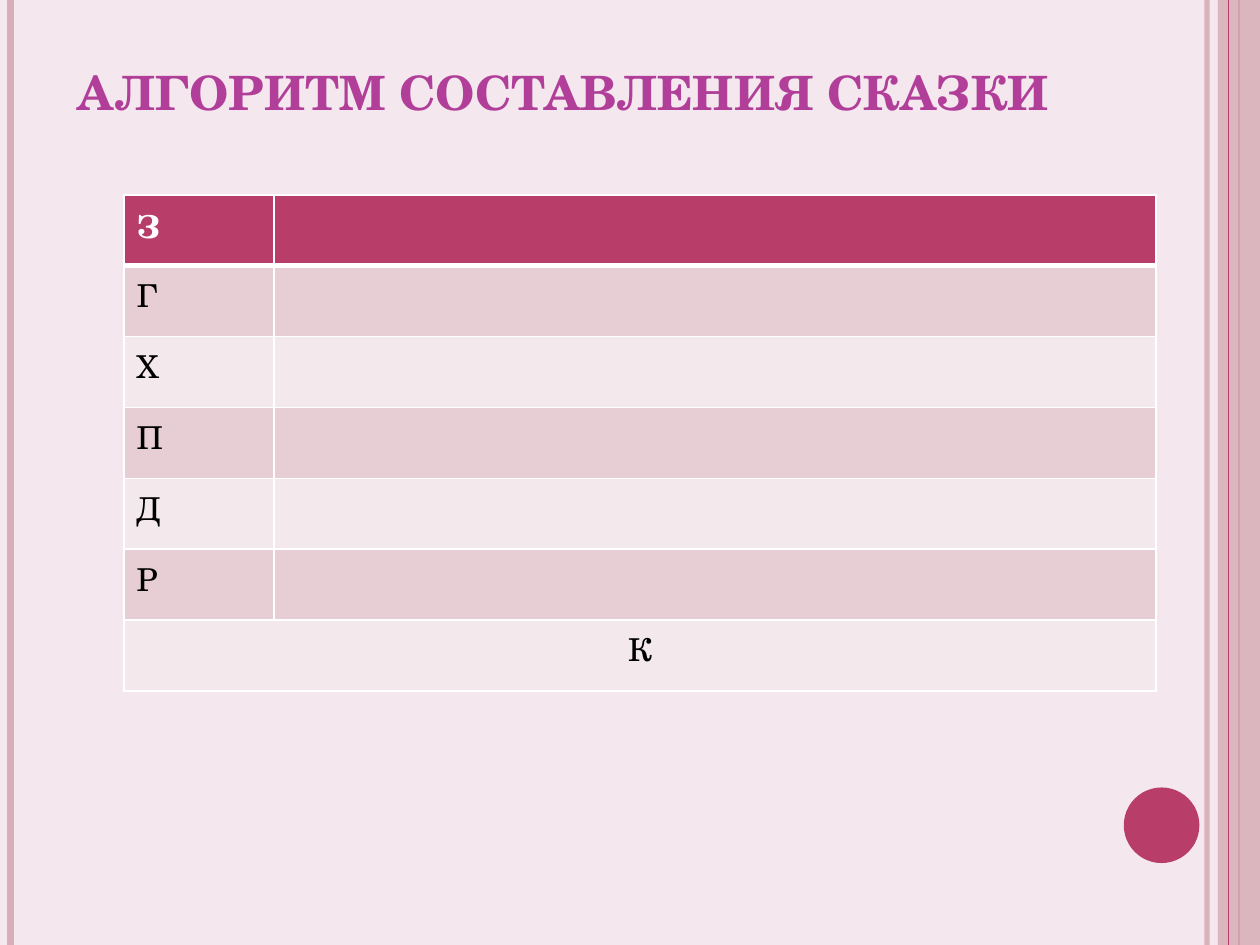
"""Build a slide with a table of steps for composing a fairy tale."""
from lxml import etree
from pptx import Presentation
from pptx.dml.color import RGBColor
from pptx.enum.shapes import MSO_CONNECTOR, MSO_SHAPE
from pptx.enum.text import MSO_ANCHOR, PP_ALIGN
from pptx.oxml.ns import qn
from pptx.util import Pt

STRAIGHT = MSO_CONNECTOR.STRAIGHT
RECTANGLE, OVAL = MSO_SHAPE.RECTANGLE, MSO_SHAPE.OVAL
BOTTOM = MSO_ANCHOR.BOTTOM
LEFT, CENTER = PP_ALIGN.LEFT, PP_ALIGN.CENTER

BACKGROUND = RGBColor(0xF4, 0xE7, 0xED)
ROSE = RGBColor(0xD8, 0xAF, 0xB9)
CRIMSON = RGBColor(0xB8, 0x3D, 0x68)
PURPLE = RGBColor(0xB1, 0x3F, 0x9A)
DARK_BAND = RGBColor(0xE6, 0xCE, 0xD4)
LIGHT_BAND = RGBColor(0xF3, 0xE8, 0xEB)
WHITE = RGBColor(0xFF, 0xFF, 0xFF)
BLACK = RGBColor(0, 0, 0)

FONT = "TeX Gyre Schola"
WIDTH, HEIGHT = 720, 540
STEPS = ["З", "Г", "Х", "П", "Д", "Р", "К"]
COLUMN_WIDTHS = [85.7, 504]
ROW_HEIGHT = 40.5


def write_text(frame, text, size=18, color=BLACK, bold=False, align=LEFT):
    """Write one formatted paragraph into a text frame."""
    paragraph = frame.paragraphs[0]
    paragraph.alignment = align
    run = paragraph.add_run()
    run.text = text
    run.font.name = FONT
    run.font.size = Pt(size)
    run.font.bold = bold
    run.font.color.rgb = color


def set_opacity(fill_format, percent):
    """Make the solid colour of a fill partly transparent."""
    color = fill_format._xPr.find(qn("a:solidFill"))[0]
    etree.SubElement(color, qn("a:alpha"), val=str(percent * 1000))


def add_stripe(slide, x, width, color, opacity=100):
    """Add a vertical line over the full height of the slide."""
    stripe = slide.shapes.add_connector(STRAIGHT, Pt(x), Pt(0), Pt(x), Pt(HEIGHT))
    stripe.line.width = Pt(width)
    stripe.line.color.rgb = color
    if opacity < 100:
        set_opacity(stripe.line.fill, opacity)
    etree.SubElement(stripe._element.spPr, qn("a:effectLst"))


def add_plain_shape(slide, kind, left, top, width, height, color, opacity=100):
    """Add a filled shape without outline or shadow."""
    shape = slide.shapes.add_shape(kind, Pt(left), Pt(top), Pt(width), Pt(height))
    shape.shadow.inherit = False
    shape.fill.solid()
    shape.fill.fore_color.rgb = color
    shape.line.fill.background()
    if opacity < 100:
        set_opacity(shape.fill, opacity)


def add_title(slide, text):
    """Add the title, anchored to the bottom of its box."""
    frame = slide.shapes.add_textbox(Pt(25.2), Pt(9.4), Pt(588), Pt(62.6)).text_frame
    frame.word_wrap = True
    frame.vertical_anchor = BOTTOM
    frame.margin_left, frame.margin_right = Pt(19), Pt(0)
    write_text(frame, text, size=27, color=PURPLE, bold=True)


def style_cell(cell, color, top, bottom):
    """Give a cell white borders and a solid fill."""
    properties = cell._tc.get_or_add_tcPr()
    for side, width in (("L", 1), ("R", 1), ("T", top), ("B", bottom)):
        border = etree.SubElement(properties, qn(f"a:ln{side}"), w=str(Pt(width)))
        fill = etree.SubElement(border, qn("a:solidFill"))
        etree.SubElement(fill, qn("a:srgbClr"), val=str(WHITE))
    cell.fill.solid()
    cell.fill.fore_color.rgb = color


def add_steps_table(slide, left, top):
    """Add the banded table with one step in each row."""
    count = len(STEPS)
    table = slide.shapes.add_table(
        count, len(COLUMN_WIDTHS), Pt(left), Pt(top),
        Pt(sum(COLUMN_WIDTHS)), Pt(count * ROW_HEIGHT)).table
    for column, width in zip(table.columns, COLUMN_WIDTHS):
        column.width = Pt(width)
    last = count - 1
    table.cell(last, 0).merge(table.cell(last, 1))
    for index, step in enumerate(STEPS):
        table.rows[index].height = Pt(ROW_HEIGHT)
        header = index == 0
        band = DARK_BAND if index % 2 else LIGHT_BAND
        for cell in table.rows[index].cells:
            style_cell(cell, CRIMSON if header else band,
                       top=3 if index == 1 else 1, bottom=3 if header else 1)
        write_text(table.cell(index, 0).text_frame, step, bold=header,
                   color=WHITE if header else BLACK,
                   align=CENTER if index == last else LEFT)


def main():
    """Build and save the presentation."""
    presentation = Presentation()
    presentation.slide_width, presentation.slide_height = Pt(WIDTH), Pt(HEIGHT)
    slide = presentation.slides.add_slide(presentation.slide_layouts[6])
    slide.background.fill.solid()
    slide.background.fill.fore_color.rgb = BACKGROUND
    add_stripe(slide, 689.8, 3, ROSE, opacity=93)
    add_stripe(slide, 6, 4.5, ROSE)
    add_stripe(slide, 708, 1.5, CRIMSON)
    add_plain_shape(slide, RECTANGLE, 696, 0, 24, HEIGHT, ROSE, opacity=87)
    add_stripe(slide, 702, 0.75, CRIMSON)
    add_plain_shape(slide, OVAL, 642.2, 450, 43.2, 43.2, CRIMSON)
    add_title(slide, "АЛГОРИТМ СОСТАВЛЕНИЯ СКАЗКИ")
    add_steps_table(slide, 70.9, 111.4)
    presentation.save("out.pptx")


if __name__ == "__main__":
    main()
